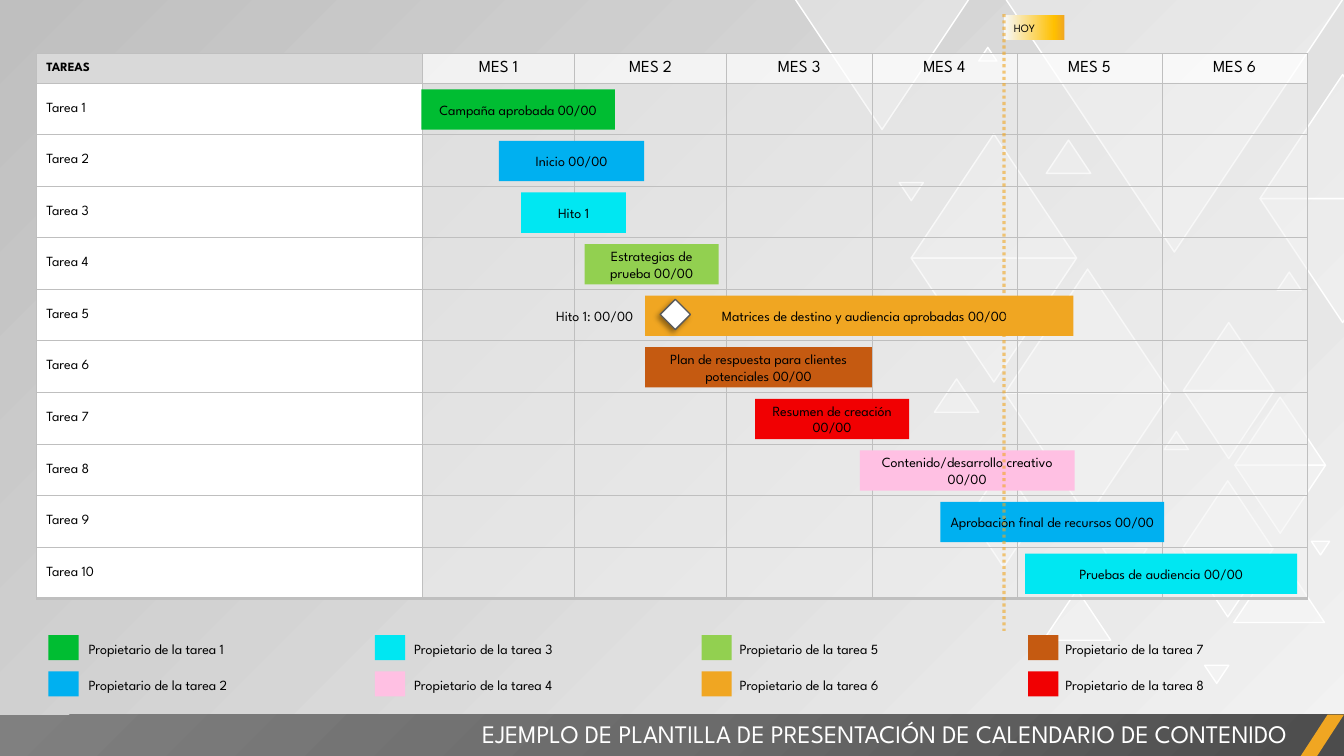
"""Build a content calendar slide with a Gantt table, task bars and an owner legend."""
from dataclasses import dataclass
from lxml.etree import SubElement
from pptx import Presentation
from pptx.dml.color import RGBColor
from pptx.enum.dml import MSO_LINE
from pptx.enum.shapes import MSO_CONNECTOR, MSO_SHAPE
from pptx.enum.text import MSO_ANCHOR, MSO_AUTO_SIZE, PP_ALIGN
from pptx.oxml.ns import qn
from pptx.shapes.autoshape import Shape
from pptx.slide import Slide
from pptx.table import _Cell
from pptx.text.text import TextFrame
from pptx.util import Inches, Pt

LEFT, MID, RIGHT = PP_ALIGN.LEFT, PP_ALIGN.CENTER, PP_ALIGN.RIGHT
TOP, CENTER = MSO_ANCHOR.TOP, MSO_ANCHOR.MIDDLE
RECT, TRI, GEM, SLANT = (MSO_SHAPE.RECTANGLE, MSO_SHAPE.ISOSCELES_TRIANGLE,
                         MSO_SHAPE.DIAMOND, MSO_SHAPE.PARALLELOGRAM)
WIDE, HIGH = Inches(13.33), Inches(7.5)
COLS, ROWS = 40, 22.5
PITCH = 15.35 / 10
FONT = "League Spartan"
HUES = {
    "black": "000000", "white": "FFFFFF", "pale": "F2F2F2", "head": "D9D9D9",
    "rule": "BFBFBF", "edge": "595959", "green": "00BD32", "blue": "00B0F0",
    "cyan": "00E7F2", "lime": "92D050", "gold": "F0A622", "rust": "C55A11",
    "red": "F10002", "pink": "FFC0E3", "coal": "4C4C4C", "slate": "6B6B6B",
    "gray": "808080", "mist": "F6F8FC", "amber": "FFC000",
}
OWNERS = ["green", "blue", "cyan", "pink", "lime", "gold", "rust", "red"]
WIDTHS = [11.49, 4.53, 4.53, 4.32, 4.32, 4.32, 4.32]


@dataclass
class Bar:
    col: float
    span: float
    hue: str
    text: str
    inset: float = 0.1


@dataclass
class Peak:
    col: float
    row: float
    size: float
    ways: str


@dataclass
class Stop:
    pos: int
    hue: str
    alpha: int = 100


BARS = [
    Bar(12.54, 5.76, "green", "Campaña aprobada 00/00"),
    Bar(14.85, 4.32, "blue", "Inicio 00/00"),
    Bar(15.51, 3.12, "cyan", "Hito 1"),
    Bar(17.4, 3.99, "lime", "Estrategias de prueba 00/00"),
    Bar(19.2, 12.75, "gold", "Matrices de destino y audiencia aprobadas 00/00", 0.2),
    Bar(19.2, 6.75, "rust", "Plan de respuesta para clientes potenciales 00/00"),
    Bar(22.47, 4.59, "red", "Resumen de creación 00/00"),
    Bar(25.59, 6.39, "pink", "Contenido/desarrollo creativo 00/00"),
    Bar(27.99, 6.66, "blue", "Aprobación final de recursos 00/00"),
    Bar(30.51, 8.1, "cyan", "Pruebas de audiencia 00/00"),
]
PEAKS = [
    Peak(27.12, 3.99, 4.92, "ud"), Peak(29.91, 8.01, 4.92, "ud"),
    Peak(29.91, -0.06, 10.08, "d"), Peak(36.72, 16.5, 2.7, "u"),
    Peak(35.19, 14.31, 2.7, "ud"), Peak(35.22, 9.6, 2.7, "ud"),
    Peak(36.75, 11.82, 2.7, "ud"), Peak(31.05, 17.55, 2.01, "u"),
    Peak(28.86, 13.86, 2.01, "ud"), Peak(37.5, 2.22, 4.92, "ud"),
    Peak(32.82, 16.32, 1.32, "d"), Peak(27.81, 11.28, 1.32, "u"),
    Peak(34.65, 12.84, 0.72, "u"), Peak(35.85, 19.8, 0.72, "d"),
    Peak(26.76, 5.43, 0.72, "d"), Peak(38.01, 8.1, 0.72, "u"),
    Peak(29.13, 1.41, 0.54, "u"), Peak(39.03, 16.11, 0.54, "d"),
    Peak(31.14, 4.17, 1.32, "u"), Peak(23.64, -0.06, 5.22, "d"),
]


def across(num: float) -> int:
    return round(WIDE * num / COLS)


def down(num: float) -> int:
    return round(HIGH * num / ROWS)


def area(col: float, row: float, span: float, tall: float) -> tuple[int, int, int, int]:
    return across(col), down(row), across(span), down(tall)


def tint(hue: str) -> RGBColor:
    return RGBColor.from_string(HUES[hue])


def fade(root, alpha: int) -> None:
    for node in root.iter(qn("a:srgbClr")):
        SubElement(node, qn("a:alpha"), val=str(alpha * 1000))


def blend(root, stops: list[Stop], angle: int | None) -> None:
    grad = next(root.iter(qn("a:gradFill")))
    for node in list(grad):
        grad.remove(node)
    chain = SubElement(grad, qn("a:gsLst"))
    for stop in stops:
        step = SubElement(chain, qn("a:gs"), pos=str(stop.pos * 1000))
        SubElement(step, qn("a:srgbClr"), val=HUES[stop.hue])
        if stop.alpha < 100:
            fade(step, stop.alpha)
    if angle is None:
        glow = SubElement(grad, qn("a:path"), {"path": "circle"})
        SubElement(glow, qn("a:fillToRect"), l="100000", t="100000")
    else:
        SubElement(grad, qn("a:lin"), ang=str(angle * 60000), scaled="0")


def write(frame: TextFrame, text: str, align: PP_ALIGN = LEFT, size: float = 10,
          hue: str = "black", bold: bool = False) -> None:
    para = frame.paragraphs[0]
    para.alignment = align
    run = para.add_run()
    run.text = text
    for key, val in {"name": FONT, "size": Pt(size), "bold": bold}.items():
        setattr(run.font, key, val)
    run.font.color.rgb = tint(hue)


def form(slide: Slide, kind: MSO_SHAPE, box: tuple[int, int, int, int],
         hue: str = "white") -> Shape:
    shape = slide.shapes.add_shape(kind, *box)
    shape.shadow.inherit = False
    shape.fill.solid()
    shape.fill.fore_color.rgb = tint(hue)
    shape.line.fill.background()
    return shape


def edge(shape: Shape, hue: str) -> None:
    shape.line.color.rgb = tint(hue)
    shape.line.width = Pt(1)


def label(slide: Slide, box: tuple[int, int, int, int], text: str,
          align: PP_ALIGN = LEFT, anchor: MSO_ANCHOR = TOP) -> None:
    frame = slide.shapes.add_textbox(*box).text_frame
    frame.word_wrap = True
    frame.vertical_anchor = anchor
    write(frame, text, align)


def peaks(slide: Slide) -> None:
    for peak in PEAKS:
        tall = peak.size * 0.75
        for step, way in enumerate(peak.ways):
            shape = form(slide, TRI, area(peak.col, peak.row + step * tall, peak.size, tall))
            fade(shape._element.spPr, 30)
            edge(shape, "white")
            shape.rotation = 180 if way == "d" else 0


def footer(slide: Slide) -> None:
    band = form(slide, RECT, area(0, 21.27, COLS, 1.25))
    band.fill.gradient()
    blend(band._element.spPr, [Stop(0, "coal"), Stop(50, "slate"), Stop(100, "gray")], None)
    form(slide, SLANT, area(38.7, 21.27, 1.3, 1.25), "gold").adjustments[0] = 0.65
    title = slide.shapes.title
    slide.shapes._spTree.append(title._element)
    title.left, title.top, title.width, title.height = area(9.24, 21.24, 29.37, 1.2)
    for key, val in {"word_wrap": True, "auto_size": MSO_AUTO_SIZE.NONE,
                     "vertical_anchor": TOP}.items():
        setattr(title.text_frame, key, val)
    write(title.text_frame, "EJEMPLO DE PLANTILLA DE PRESENTACIÓN DE CALENDARIO DE CONTENIDO",
          RIGHT, 18, "white")


def dress(cell: _Cell, hue: str, alpha: int, last: bool) -> None:
    cell.vertical_anchor = CENTER
    cell.fill.solid()
    cell.fill.fore_color.rgb = tint(hue)
    props = cell._tc.tcPr
    fade(props, alpha)
    for spot, side in enumerate("LRTB"):
        width = Pt(3 if last and side == "B" else 0.5)
        line = SubElement(props, qn(f"a:ln{side}"), w=str(width))
        SubElement(SubElement(line, qn("a:solidFill")), qn("a:srgbClr"), val=HUES["rule"])
        props.insert(spot, line)


def chart(slide: Slide) -> None:
    count = len(BARS)
    box = area(1.08, 1.59, sum(WIDTHS), 0.88 + count * PITCH)
    table = slide.shapes.add_table(count + 1, len(WIDTHS), *box).table
    table.first_row = table.horz_banding = False
    for col, width in enumerate(WIDTHS):
        table.columns[col].width = across(width)
    for row in range(count + 1):
        table.rows[row].height = down(PITCH if row else 0.88)
        for col in range(len(WIDTHS)):
            cell = table.cell(row, col)
            if row:
                look = ("pale", 50) if col else ("white", 100)
            else:
                look = ("white", 75) if col else ("head", 100)
            dress(cell, *look, row == count)
            if row and not col:
                write(cell.text_frame, f"Tarea {row}")
            elif col and not row:
                write(cell.text_frame, f"MES {col}", MID, 12)
    write(table.cell(0, 0).text_frame, "TAREAS", size=9, bold=True)


def bars(slide: Slide) -> None:
    for num, bar in enumerate(BARS):
        shape = form(slide, RECT, area(bar.col, 2.66 + num * PITCH, bar.span, 1.2), bar.hue)
        shape.text_frame.margin_left = Inches(bar.inset)
        write(shape.text_frame, bar.text, MID)


def legend(slide: Slide) -> None:
    for num, hue in enumerate(OWNERS):
        col, row = divmod(num, 2)
        top = 18.9 + 1.08 * row
        form(slide, RECT, area(1.44 + 9.72 * col, top, 0.9, 0.75), hue)
        label(slide, area(2.34 + 9.69 * col, top, 7.2, 0.8), f"Propietario de la tarea {num + 1}")


def today(slide: Slide) -> None:
    flag = form(slide, RECT, area(29.88, 0.45, 1.8, 0.75))
    flag.fill.gradient()
    blend(flag._element.spPr, [Stop(0, "mist"), Stop(83, "amber"), Stop(100, "gold")], 0)
    write(flag.text_frame, "HOY", size=8)
    spot = across(29.88)
    line = slide.shapes.add_connector(MSO_CONNECTOR.STRAIGHT, spot, down(0.42), spot, down(18.78))
    line.line.color.rgb = tint("gold")
    line.line.width = Pt(2.25)
    line.line.dash_style = MSO_LINE.ROUND_DOT
    props = line._element.spPr
    fade(props, 60)
    SubElement(props, qn("a:effectLst"))


def goal(slide: Slide) -> None:
    gem = form(slide, GEM, area(19.65, 8.91, 0.9, 0.9))
    edge(gem, "edge")
    glow = SubElement(gem._element.spPr.find(qn("a:effectLst")), qn("a:outerShdw"),
                      blurRad=str(Pt(4)), dist=str(Pt(3)), dir=str(135 * 60000))
    SubElement(glow, qn("a:srgbClr"), val=HUES["black"])
    fade(glow, 40)
    label(slide, area(12.63, 8.79, 6.51, 1.2), "Hito 1: 00/00", RIGHT, CENTER)


def main() -> None:
    deck = Presentation()
    deck.slide_width, deck.slide_height = WIDE, HIGH
    slide = deck.slides.add_slide(deck.slide_layouts[5])
    slide.background.fill.gradient()
    blend(slide._element, [Stop(0, "pale", 40), Stop(100, "rule")], 225)
    for draw in (peaks, footer, chart, bars, legend, today, goal):
        draw(slide)
    deck.save("out.pptx")


if __name__ == "__main__":
    main()
